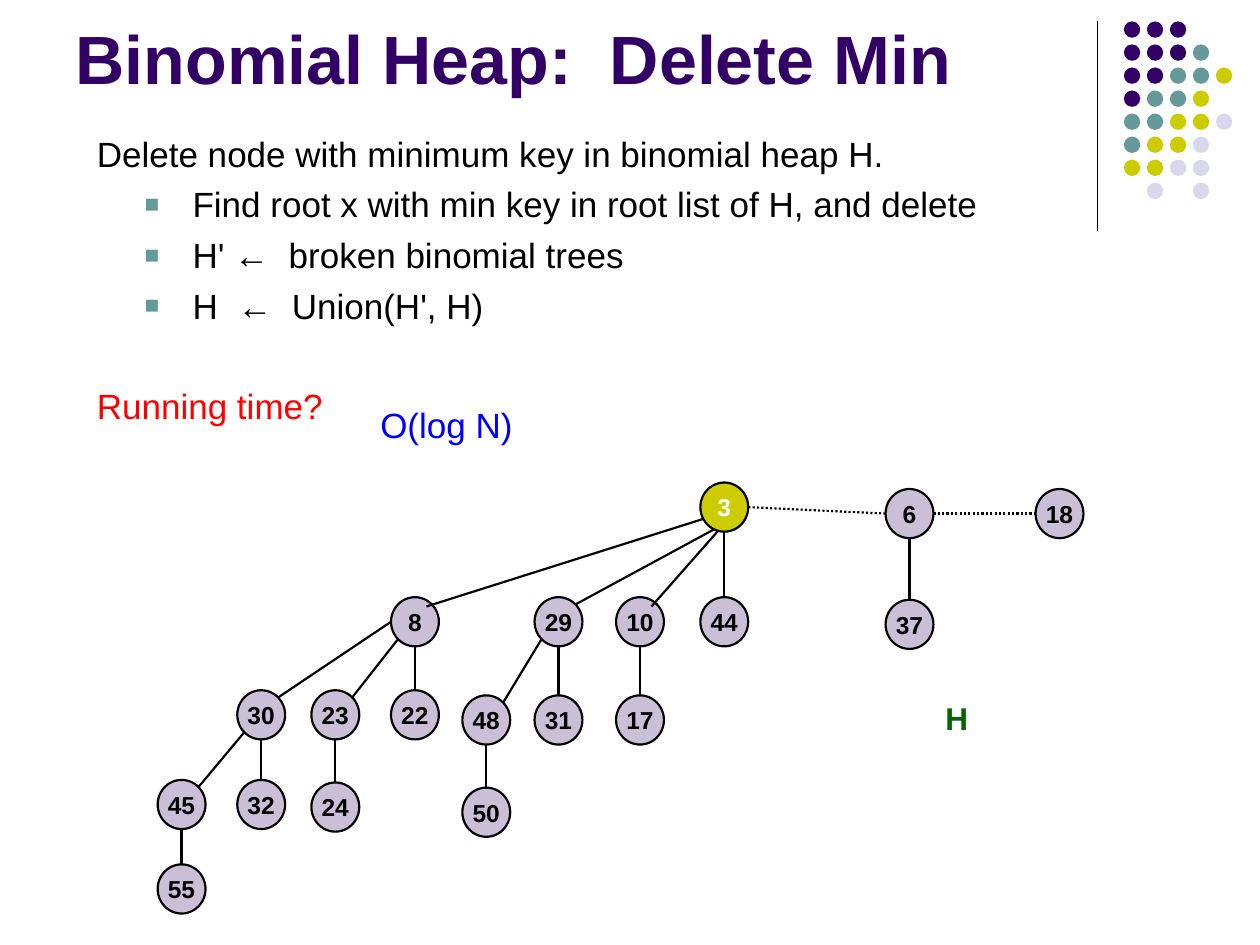
from dataclasses import dataclass
from typing import NamedTuple

from lxml.etree import SubElement
from pptx import Presentation
from pptx.dml.color import RGBColor
from pptx.enum.dml import MSO_LINE
from pptx.enum.shapes import MSO_CONNECTOR, MSO_SHAPE
from pptx.enum.text import MSO_ANCHOR, MSO_AUTO_SIZE, PP_ALIGN
from pptx.oxml.ns import qn
from pptx.util import Inches, Pt


@dataclass(frozen=True)
class Theme:
    font: str = "Arial"
    purple: str = "330066"
    teal: str = "669999"
    olive: str = "CCCC00"
    pale: str = "D8D8EC"
    black: str = "000000"
    white: str = "FFFFFF"
    red: str = "FF0000"
    blue: str = "0000FF"
    green: str = "006600"
    title_size: float = 39
    body_size: float = 20
    label_size: float = 18
    node_size: float = 14


class Box(NamedTuple):
    left: float
    top: float
    width: float
    height: float

    def point(self, across, down):
        return self.left + self.width * across / 100, self.top + self.height * down / 100

    def emu(self):
        return [Inches(length) for length in self]


THEME = Theme()
DIAGONAL = 0.35
NODE_WIDTH, NODE_HEIGHT = 0.38, 0.39
ANCHORS = {
    "top": (0, -0.5), "bottom": (0, 0.5), "left": (-0.5, 0), "right": (0.5, 0),
    "lower left": (-DIAGONAL, DIAGONAL), "upper right": (DIAGONAL, -DIAGONAL),
    "inner right": (0.24, -0.31), "inner left": (-0.05, 0.12), "inner bottom": (0, 0.34),
}
DOT_ROWS = ["PPP", "PPPT", "PPTTO", "PTTO", "TTOOL", "TOOL", "OOLL", " L L"]
DOT_COLORS = {"P": THEME.purple, "T": THEME.teal, "O": THEME.olive, "L": THEME.pale}

COLUMNS = [2.6, 11.2, 19.2, 27.8, 35.5, 43.3, 52.1, 61.2, 81.2, 97.4]
NODES = {
    "3": (7, 5.7), "6": (8, 7.2), "18": (9, 7.2),
    "8": (3, 32.3), "29": (5, 32.3), "10": (6, 32.3), "44": (7, 32.3), "37": (8, 32.9),
    "30": (1, 53.9), "23": (2, 53.9), "22": (3, 53.9),
    "48": (4, 55.1), "31": (5, 55.1), "17": (6, 55.1),
    "45": (0, 74.7), "32": (1, 74.7), "24": (2, 75.3), "50": (4, 76.5), "55": (0, 94.3),
}
STRAIGHT_EDGES = [("3", "44"), ("6", "37"), ("8", "22"), ("29", "31"), ("10", "17"),
                  ("30", "32"), ("23", "24"), ("48", "50"), ("45", "55")]
SLANTED_EDGES = [("8", "23"), ("29", "48"), ("30", "45")]
SPECIAL_EDGES = [("8", "30", "left", "upper right"),
                 ("3", "8", "inner left", "inner right"),
                 ("3", "29", "inner bottom", "upper right"),
                 ("3", "10", "inner bottom", "inner right")]
ROOT_LINKS = [("3", "6"), ("6", "18")]


def rgb(color):
    return RGBColor.from_string(color)


def format_runs(paragraph, size, color, bold=False):
    for run in paragraph.runs:
        font = run.font
        font.name, font.size, font.bold = THEME.font, Pt(size), bold
        font.color.rgb = rgb(color)


def add_line(shapes, start, end, width, dash=None):
    line = shapes.add_connector(MSO_CONNECTOR.STRAIGHT,
                                *[Inches(length) for length in (*start, *end)])
    line.line.color.rgb = rgb(THEME.black)
    line.line.width = Pt(width)
    if dash:
        line.line.dash_style = dash
    SubElement(line._element.spPr, qn("a:effectLst"))


def add_ellipse(shapes, box, color):
    ellipse = shapes.add_shape(MSO_SHAPE.OVAL, *box.emu())
    ellipse.shadow.inherit = False
    ellipse.fill.solid()
    ellipse.fill.fore_color.rgb = rgb(color)
    ellipse.line.fill.background()
    return ellipse


def add_label(shapes, box, text, size, color, bold=False, align=PP_ALIGN.LEFT, wrap=True):
    frame = shapes.add_textbox(*box.emu()).text_frame
    frame.word_wrap = wrap
    frame.text = text
    frame.paragraphs[0].alignment = align
    format_runs(frame.paragraphs[0], size, color, bold)


def add_title(slide, box, text):
    title = slide.shapes.title
    title.left, title.top, title.width, title.height = box.emu()
    frame = title.text_frame
    frame.text = text
    frame.auto_size = MSO_AUTO_SIZE.NONE
    frame.vertical_anchor = MSO_ANCHOR.BOTTOM
    frame.paragraphs[0].alignment = PP_ALIGN.LEFT
    format_runs(frame.paragraphs[0], THEME.title_size, THEME.purple, True)


def add_bullet(paragraph):
    properties = paragraph._p.get_or_add_pPr()
    properties.set("marL", str(Inches(0.76)))
    properties.set("indent", str(Inches(-0.38)))
    color = SubElement(properties, qn("a:buClr"))
    SubElement(color, qn("a:srgbClr"), val=THEME.teal)
    SubElement(properties, qn("a:buSzPct"), val="70000")
    SubElement(properties, qn("a:buFont"), typeface=THEME.font)
    SubElement(properties, qn("a:buChar"), char="■")


def add_body(slide, box, intro, steps, question):
    frame = slide.shapes.add_textbox(*box.emu()).text_frame
    frame.word_wrap = True
    lines = [intro, *steps, question]
    frame.text = "\n".join(lines)
    for line, paragraph in zip(lines, frame.paragraphs):
        asking = line == question
        paragraph.space_before = Pt(33 if asking else 5)
        if line in steps:
            add_bullet(paragraph)
        format_runs(paragraph, THEME.body_size, THEME.red if asking else THEME.black)


def add_dots(slide, box):
    size = 0.13
    across = (box.width - size) / 4
    down = (box.height - size) / (len(DOT_ROWS) - 1)
    group = slide.shapes.add_group_shape()
    for row, marks in enumerate(DOT_ROWS):
        for column, mark in enumerate(marks):
            if mark in DOT_COLORS:
                dot = Box(box.left + column * across, box.top + row * down, size, size)
                add_ellipse(group.shapes, dot, DOT_COLORS[mark])


def add_node(shapes, center, key):
    x, y = center
    is_minimum = key == "3"
    box = Box(x - NODE_WIDTH / 2, y - NODE_HEIGHT / 2, NODE_WIDTH, NODE_HEIGHT)
    node = add_ellipse(shapes, box, THEME.olive if is_minimum else THEME.purple)
    if not is_minimum:
        color = node._element.spPr.find(qn("a:solidFill"))[0]
        SubElement(color, qn("a:alpha"), val="25000")
    node.line.color.rgb = rgb(THEME.black)
    node.line.width = Pt(1.25)
    frame = node.text_frame
    frame.word_wrap = False
    frame.vertical_anchor = MSO_ANCHOR.MIDDLE
    frame.text = key
    frame.paragraphs[0].alignment = PP_ALIGN.CENTER
    format_runs(frame.paragraphs[0], THEME.node_size,
                THEME.white if is_minimum else THEME.black, True)


def add_heap(slide, box):
    shapes = slide.shapes.add_group_shape().shapes
    centers = {key: box.point(COLUMNS[column], down) for key, (column, down) in NODES.items()}

    def anchor(key, side):
        (x, y), (across, down) = centers[key], ANCHORS[side]
        return x + across * NODE_WIDTH, y + down * NODE_HEIGHT

    edges = [(*edge, "bottom", "top") for edge in STRAIGHT_EDGES]
    edges += [(*edge, "lower left", "upper right") for edge in SLANTED_EDGES]
    for parent, child, start, end in edges + SPECIAL_EDGES:
        add_line(shapes, anchor(child, end), anchor(parent, start), 1.25)
    for first, second in ROOT_LINKS:
        add_line(shapes, anchor(first, "right"), anchor(second, "left"), 1.25,
                 MSO_LINE.ROUND_DOT)
    for key, center in centers.items():
        add_node(shapes, center, key)
    left, top = box.point(81.6, 48.8)
    add_label(shapes, Box(left, top, 0.69, 0.4), "H", THEME.label_size, THEME.green,
              True, PP_ALIGN.CENTER)


def main():
    presentation = Presentation()
    presentation.slide_width, presentation.slide_height = Inches(10), Inches(7.5)
    slide = presentation.slides.add_slide(presentation.slide_layouts[5])
    add_line(slide.shapes, (8.71, 0.17), (8.71, 1.83), 0.75)
    add_dots(slide, Box(8.92, 0.17, 0.86, 1.41))
    add_title(slide, Box(0.5, 0.13, 8.25, 0.7), "Binomial Heap:  Delete Min")
    add_body(slide, Box(0.67, 1, 8.58, 2.75),
             "Delete node with minimum key in binomial heap H.",
             ["Find root x with min key in root list of H, and delete",
              "H' ←  broken binomial trees", "H  ←  Union(H', H)"],
             "Running time?")
    add_label(slide.shapes, Box(2.92, 3.15, 1.26, 0.44), "O(log N)", THEME.body_size,
              THEME.blue, wrap=False)
    add_heap(slide, Box(1.25, 3.83, 7.35, 3.42))
    presentation.save("out.pptx")


if __name__ == "__main__":
    main()
